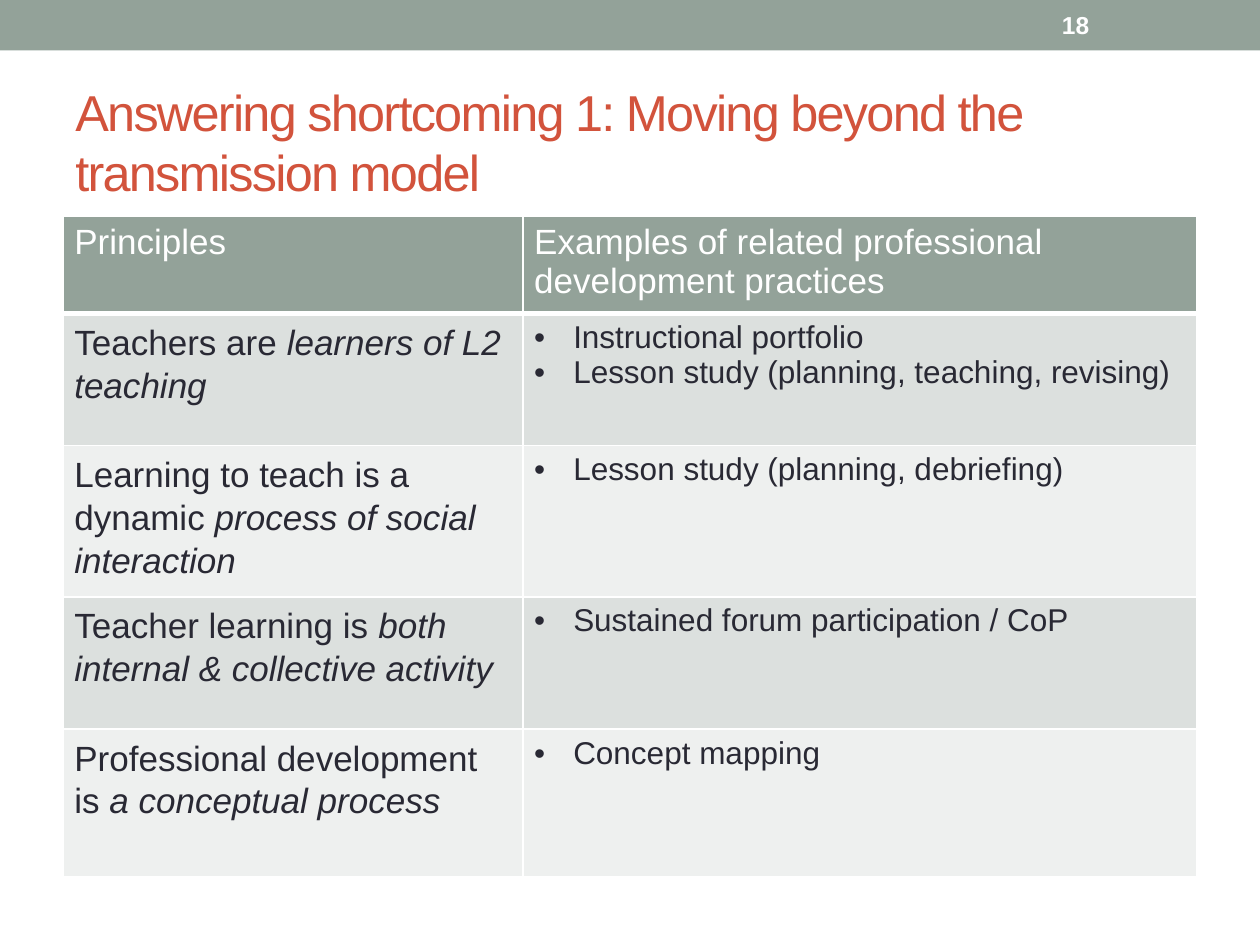
from lxml import etree
from pptx import Presentation
from pptx import util as u
from pptx.dml.color import RGBColor
from pptx.enum import shapes, text
from pptx.oxml.ns import qn

# Content: a cell is a list of paragraphs, a paragraph a list of (text, italic)
TITLE = "Answering shortcoming 1: Moving beyond the transmission model"
PAGE = "18"
HEADER = ["Principles", "Examples of related professional development practices"]
ROWS = [
    ([[("Teachers are ", False), ("learners of L2 teaching", True)]],
     ["Instructional portfolio", "Lesson study (planning, teaching, revising)"]),
    ([[("Learning to teach is a", False)],
      [("dynamic ", False), ("process of social", True)],
      [("interaction", True)]],
     ["Lesson study (planning, debriefing)"]),
    ([[("Teacher learning is ", False), ("both internal & collective activity", True)]],
     ["Sustained forum participation / CoP"]),
    ([[("Professional development", False)],
      [("is ", False), ("a conceptual process", True)]],
     ["Concept mapping"]),
]

# Layout and formats
COLS = [3.65, 5.35]
HEIGHTS = [0.71, 1.05, 1.19, 1.05, 1.17]
SAGE, WHITE, INK, RED = "93A299", "FFFFFF", "292934", "D2533C"
BANDS = ["DCE0DE", "EEF0EF"]
HEAD = dict(size=20, color=WHITE)
PRINCIPLE = dict(size=20, color=INK)
EXAMPLE = dict(size=18, color=INK)


def rgb(value):
    return RGBColor.from_string(value)


def add_run(p, words, size, color, **fmt):
    r = p.add_run()
    r.text = words
    r.font.color.rgb = rgb(color)
    for name, value in dict(name="Arial", size=u.Pt(size), **fmt).items():
        setattr(r.font, name, value)
    return r


def add_text(s, box, words, **fmt):
    tf = s.shapes.add_textbox(*map(u.Inches, box)).text_frame
    tf.word_wrap = True
    tf.vertical_anchor = text.MSO_ANCHOR.MIDDLE
    return add_run(tf.paragraphs[0], words, **fmt)


def add_bullet(p):
    pPr = p._p.get_or_add_pPr()
    pPr.set("marL", str(u.Inches(0.31)))
    pPr.set("indent", str(-u.Inches(0.31)))
    etree.SubElement(pPr, qn("a:buFont"), typeface="Arial")
    etree.SubElement(pPr, qn("a:buChar"), char="•")


def style_cell(cell, fill, bottom=1):
    tcPr = cell._tc.get_or_add_tcPr()
    for side, width in dict(L=1, R=1, T=1, B=bottom).items():
        ln = etree.SubElement(tcPr, qn("a:ln" + side), w=str(u.Pt(width)))
        line_fill = etree.SubElement(ln, qn("a:solidFill"))
        etree.SubElement(line_fill, qn("a:srgbClr"), val=WHITE)
    cell.fill.solid()
    cell.fill.fore_color.rgb = rgb(fill)
    for side, inset in dict(left=0.09, top=0.05, right=0.09, bottom=0.05).items():
        setattr(cell, "margin_" + side, u.Inches(inset))


def write_cell(cell, paragraphs, fmt, spacing=None, bullet=False):
    tf = cell.text_frame
    for i, runs in enumerate(paragraphs):
        p = tf.add_paragraph() if i else tf.paragraphs[0]
        if spacing:
            p.line_spacing = spacing
        if bullet:
            add_bullet(p)
        for words, italic in runs:
            add_run(p, words, italic=italic, **fmt)


def add_principles_table(s):
    table = s.shapes.add_table(len(HEIGHTS), len(COLS), u.Inches(0.5), u.Inches(1.72),
                               u.Inches(sum(COLS)), u.Inches(sum(HEIGHTS))).table
    for col, width in zip(table.columns, COLS):
        col.width = u.Inches(width)
    for row, height in zip(table.rows, HEIGHTS):
        row.height = u.Inches(height)

    # Header row
    for cell, words in zip(table.rows[0].cells, HEADER):
        style_cell(cell, SAGE, bottom=3)
        write_cell(cell, [[(words, False)]], HEAD)

    # Banded body rows
    for i, (principle, examples) in enumerate(ROWS):
        left, right = table.rows[i + 1].cells
        for cell in (left, right):
            style_cell(cell, BANDS[i % 2])
        write_cell(left, principle, PRINCIPLE, spacing=1.1)
        write_cell(right, [[(e, False)] for e in examples], EXAMPLE, bullet=True)


def main():
    prs = Presentation()
    prs.slide_width, prs.slide_height = u.Inches(10), u.Inches(7.5)
    s = prs.slides.add_slide(prs.slide_layouts[6])

    # Top band
    sp = s.shapes.add_shape(shapes.MSO_SHAPE.RECTANGLE, 0, 0, prs.slide_width, u.Inches(0.4))
    sp.shadow.inherit = False
    sp.fill.solid()
    sp.fill.fore_color.rgb = rgb(SAGE)
    sp.line.fill.background()

    # Title, table and page number
    r = add_text(s, (0.5, 0.58, 9, 1.08), TITLE, size=28.8, color=RED)
    r.font._element.set("spc", "-100")
    add_principles_table(s)
    add_text(s, (8.33, 0.02, 1.17, 0.36), PAGE, size=14, color=WHITE, bold=True)

    prs.save("out.pptx")


if __name__ == "__main__":
    main()
